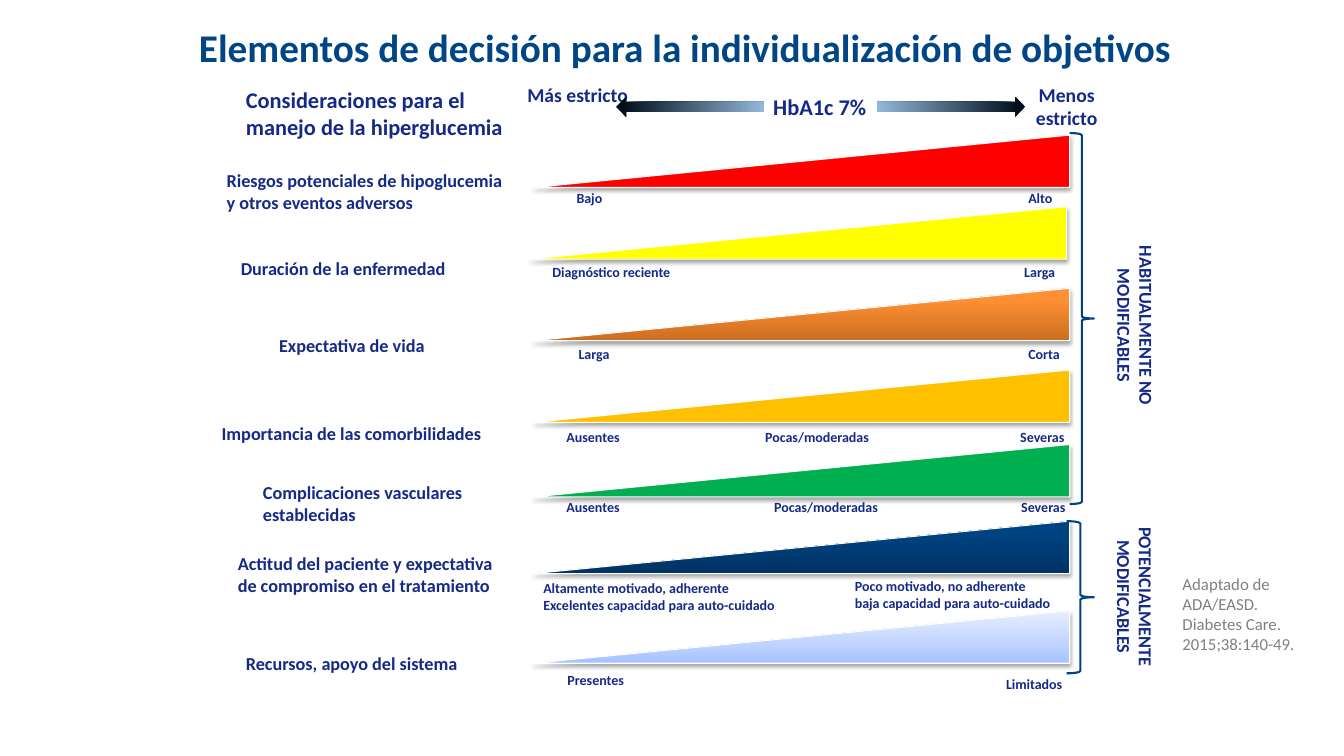
from lxml.etree import SubElement
from pptx import Presentation
from pptx.dml.color import RGBColor
from pptx.enum.shapes import MSO_SHAPE
from pptx.enum.text import MSO_ANCHOR, PP_ALIGN
from pptx.oxml.ns import qn
from pptx.util import Inches, Pt

CELL = Inches(0.1)  # the grid: 133.3 columns by 75 rows
THEME = {
    "text": "152A86", "title": "004586", "brace": "004383",
    "edge": "FFFFFF", "source": "808080", "shadow": "000000",
    "arrow": [(4, "000E1B"), (100, "94B8DB")],
    "hypo": "FF0000", "duration": "FFFF00", "comorbid": "FFC000", "vascular": "00B050",
    "life": [(0, "CC6E20"), (80, "FF9034"), (100, "FF9136")],
    "attitude": [(0, "003364"), (80, "004382"), (100, "004382")],
    "resources": [(0, "A4C2FF"), (35, "BFD3FF"), (100, "E7EEFF")],
    "font": "Calibri",
    "size": {"title": 28, "head": 16, "side": 14, "label": 13, "source": 12, "scale": 10},
}

prs = Presentation()
prs.slide_width, prs.slide_height = Inches(13.33), Inches(7.5)
s = prs.slides.add_slide(prs.slide_layouts[6])


def add_text(text, box, size, color="text", align=PP_ALIGN.LEFT, wrap=True, bold=True,
             anchor=MSO_ANCHOR.TOP, rotation=0):
    """Place a text box on the grid; each line of text is a paragraph."""
    sp = s.shapes.add_textbox(*(int(n * CELL) for n in box))
    sp.rotation = rotation
    tf = sp.text_frame
    tf.text, tf.word_wrap, tf.vertical_anchor = text, wrap, anchor
    fmt = {"name": THEME["font"], "size": Pt(THEME["size"][size]), "bold": bold}
    for p in tf.paragraphs:
        p.alignment = align
        for r in p.runs:
            for key, value in fmt.items():
                setattr(r.font, key, value)
            r.font.color.rgb = RGBColor.from_string(THEME[color])
    return sp


def add_figure(kind, box, fill=None, line=None, width=0.75, angle=0):
    """Place a preset shape; fill is a colour, a list of gradient stops or None."""
    sp = s.shapes.add_shape(kind, *(int(n * CELL) for n in box))
    sp.shadow.inherit = False
    if line:
        sp.line.color.rgb = RGBColor.from_string(line)
        sp.line.width = Pt(width)
    else:
        sp.line.fill.background()
    if fill is None:
        sp.fill.background()
    elif isinstance(fill, str):
        sp.fill.solid()
        sp.fill.fore_color.rgb = RGBColor.from_string(fill)
    else:
        sp.fill.gradient()
        grad = sp._element.spPr.find(qn("a:gradFill"))
        for child in list(grad):
            grad.remove(child)
        stops = SubElement(grad, qn("a:gsLst"))
        for pos, color in fill:
            gs = SubElement(stops, qn("a:gs"), pos=str(pos * 1000))
            SubElement(gs, qn("a:srgbClr"), val=color)
        SubElement(grad, qn("a:lin"), ang=str(angle * 60000), scaled="0")
    return sp


add_text("Elementos de decisión para la individualización de objetivos",
         (16.3, 0, 103.2, 9.2), "title", "title", PP_ALIGN.CENTER, anchor=MSO_ANCHOR.MIDDLE)
add_text("Consideraciones para el\nmanejo de la hiperglucemia",
         (23.4, 8.1, 27.8, 6.4), "head", wrap=False)

# Wedge column, wedge row, fill, label, label box, then scale words: column, row, width
WEDGES = [
    (52.9, 13.4, "hypo", "Riesgos potenciales de hipoglucemia y otros eventos adversos",
     (21.5, 16.3, 29.5, 5.4),
     [("Bajo", 56.2, 18.3, 4.6), ("Alto", 101, 18.3, 4.5)]),
    (52.6, 20.5, "duration", "Duración de la enfermedad", (22.9, 25, 26.4, 3.2),
     [("Diagnóstico reciente", 53.8, 25.7, 13.9), ("Larga", 100.6, 25.7, 5.2)]),
    (52.9, 28.6, "life", "Expectativa de vida", (26.7, 32.7, 16.6, 3.2),
     [("Larga", 56.4, 33.8, 5.2), ("Corta", 101, 33.8, 5.2)]),
    (52.9, 36.7, "comorbid", "Importancia de las comorbilidades", (21, 41.4, 28.1, 3.2),
     [("Ausentes", 55.2, 42, 7.4), ("Pocas/moderadas", 74.9, 42, 12.5),
      ("Severas", 100.2, 42, 6.5)]),
    (52.9, 44.1, "vascular", "Complicaciones vasculares establecidas", (25.1, 47.3, 22.9, 5.4),
     [("Ausentes", 55.2, 49, 7.4), ("Pocas/moderadas", 75.8, 49, 12.5),
      ("Severas", 100.3, 49, 6.5)]),
    (52.9, 51.7, "attitude", "Actitud del paciente y expectativa\nde compromiso en el tratamiento",
     (22.6, 54.3, 28.2, 5.4),
     [("Altamente motivado, adherente\nExcelentes capacidad para auto-cuidado", 52.9, 57, 25.6),
      ("Poco motivado, no adherente\nbaja capacidad para auto-cuidado", 83.8, 56.8, 21.9)]),
    (52.9, 60.6, "resources", "Recursos, apoyo del sistema", (23.4, 64.2, 23.7, 3.2),
     [("Presentes", 55.3, 66.1, 11.8), ("Limitados", 98.8, 66.5, 7.7)]),
]
for col, row, fill, label, label_box, scale in WEDGES:
    wedge = add_figure(MSO_SHAPE.RIGHT_TRIANGLE, (col, row, 53.2, 5.2), THEME[fill],
                       THEME["edge"], angle=270)
    spPr = wedge._element.spPr
    spPr.find(qn("a:xfrm")).set("flipH", "1")
    shadow = SubElement(spPr.find(qn("a:effectLst")), qn("a:outerShdw"), blurRad=str(Pt(3.1)),
                        dist=str(Pt(1.8)), dir="5400000", rotWithShape="0")
    tint = SubElement(shadow, qn("a:srgbClr"), val=THEME["shadow"])
    SubElement(tint, qn("a:alpha"), val="35000")
    add_text(label, label_box, "label", wrap=label_box[3] > 5)
    for word, left, top, width in scale:
        height = 2.7 + 1.7 * word.count("\n")
        add_text(word, (left, top, width, height), "scale", wrap=False)

# HbA1c axis
for text, box, size in [("Más estricto", (51.3, 7.7, 12, 5.7), "side"),
                        ("Menos estricto", (99, 7.7, 13.6, 5.7), "side"),
                        ("HbA1c 7%", (75.4, 8.7, 11.8, 3.7), "head")]:
    add_text(text, box, size, align=PP_ALIGN.CENTER)
for left, rotation in [(87, 0), (61.1, 180)]:
    arrow = add_figure(MSO_SHAPE.RIGHT_ARROW, (left, 9.6, 14.7, 2), THEME["arrow"], angle=180)
    arrow.rotation = rotation

# Groups on the right
GROUPS = [
    ("HABITUALMENTE NO MODIFICABLES", (98.5, 29.6, 28.2, 5.4), (106.1, 13.2, 2.4, 36.8)),
    ("POTENCIALMENTE MODIFICABLES", (104.3, 56.5, 16.5, 5.4), (105.8, 51.7, 2.7, 15.1)),
]
for text, text_box, brace_box in GROUPS:
    add_figure(MSO_SHAPE.RIGHT_BRACE, brace_box, line=THEME["brace"], width=1.5)
    add_text(text, text_box, "label", align=PP_ALIGN.CENTER, rotation=90)

add_text("Adaptado de ADA/EASD. Diabetes Care. 2015;38:140-49.",
         (116.3, 56.4, 15, 8.9), "source", "source", bold=False)

prs.save("out.pptx")
